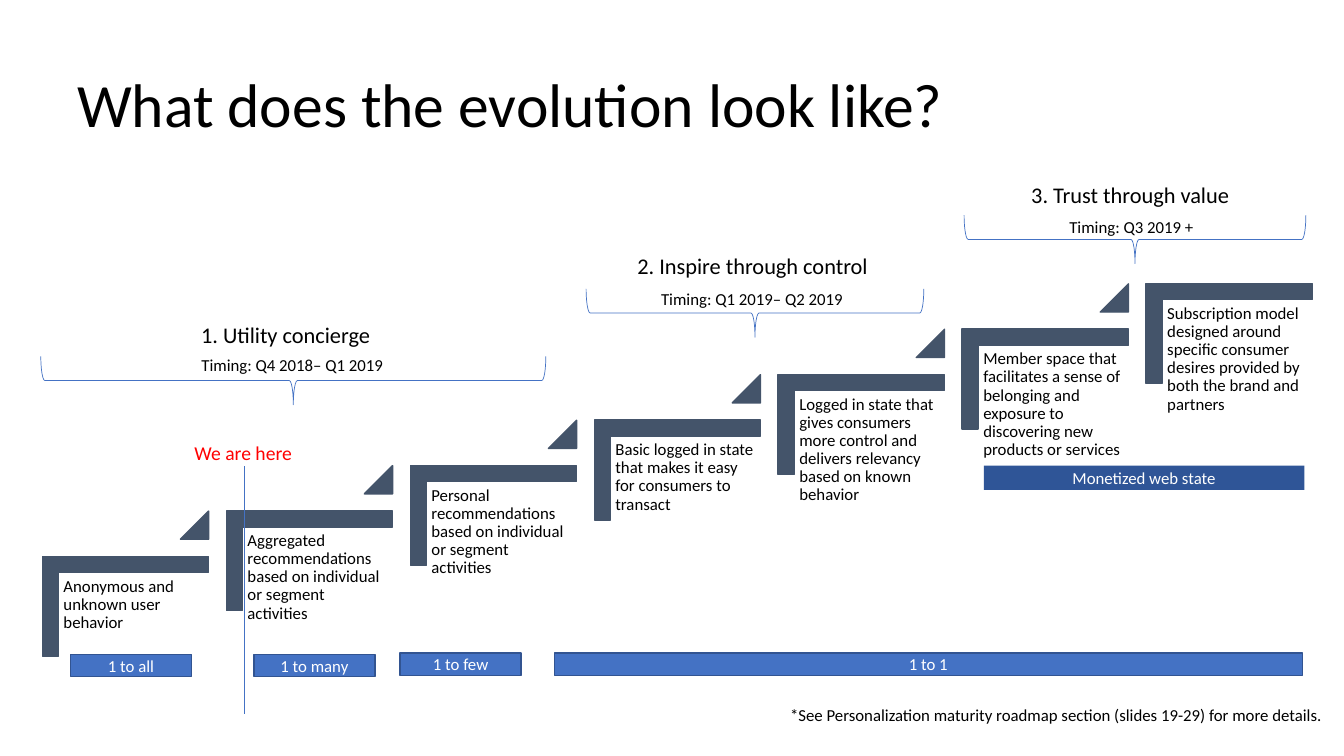
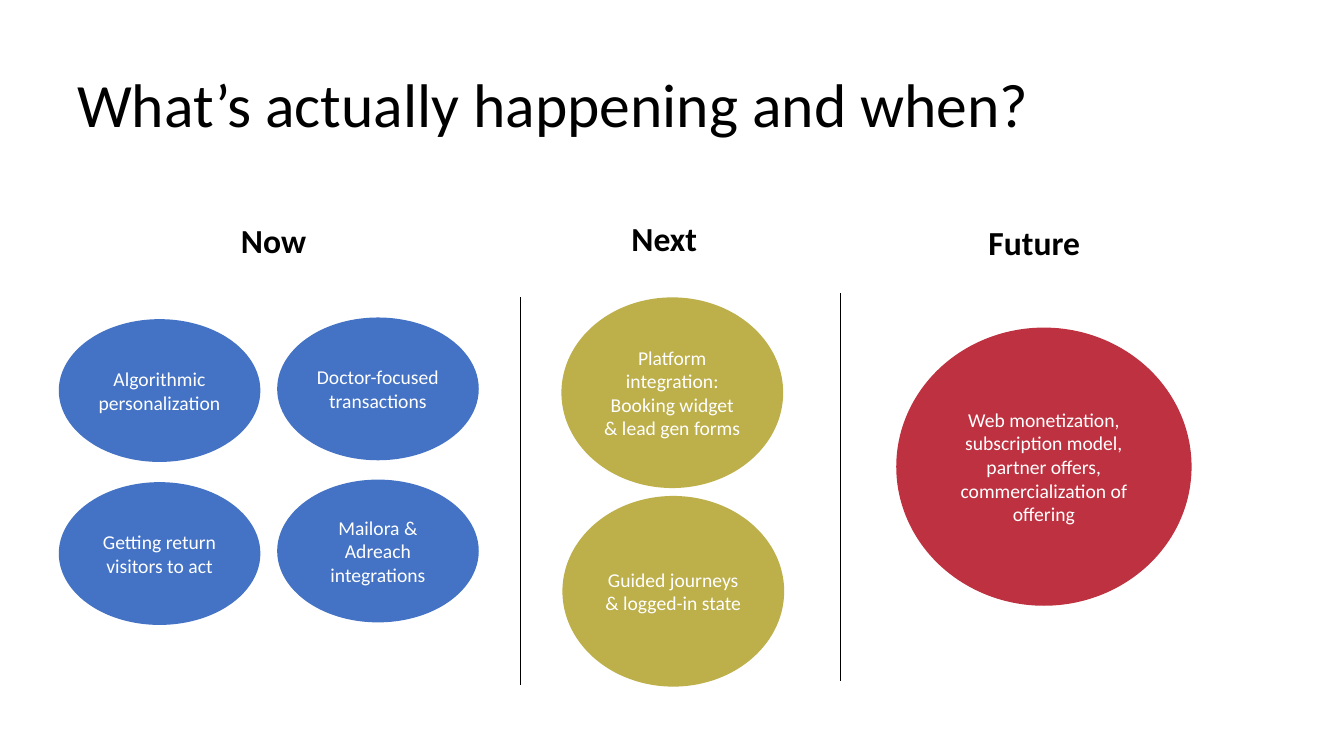
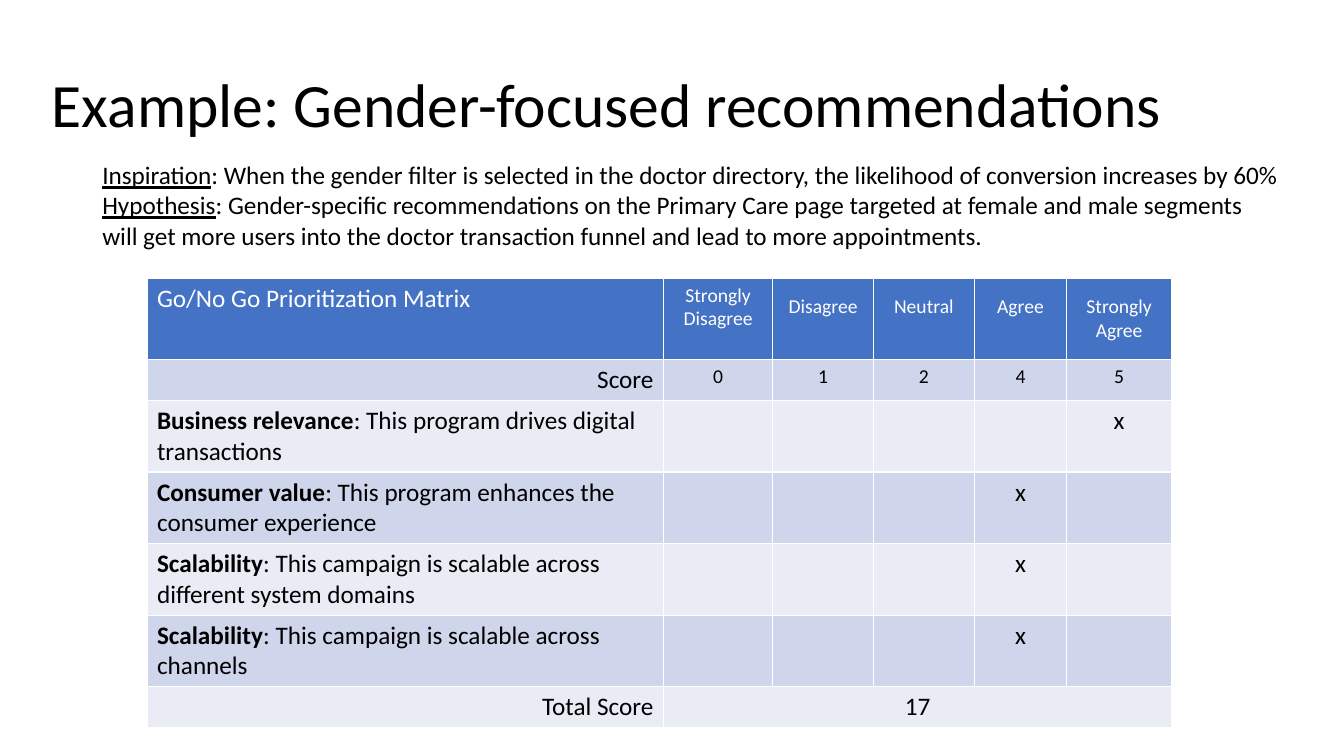
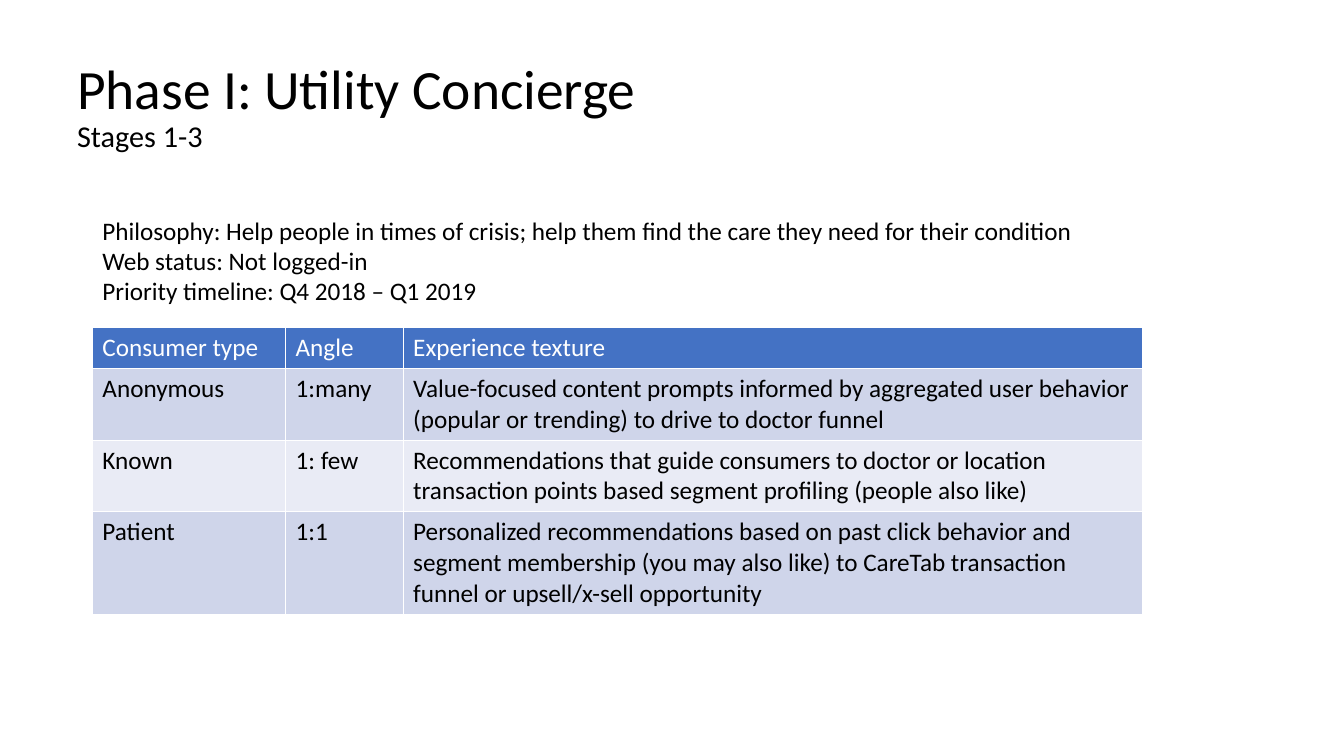
from lxml import etree
from pptx import Presentation
from pptx.dml.color import RGBColor
from pptx.enum.shapes import MSO_CONNECTOR, MSO_SHAPE
from pptx.enum.text import MSO_ANCHOR, PP_ALIGN
from pptx.oxml.ns import qn
from pptx.util import Emu, Inches, Pt

CORNER, TRIANGLE = MSO_SHAPE.CORNER, MSO_SHAPE.ISOSCELES_TRIANGLE
BRACE, RECTANGLE, OVAL = MSO_SHAPE.LEFT_BRACE, MSO_SHAPE.RECTANGLE, MSO_SHAPE.OVAL
STRAIGHT = MSO_CONNECTOR.STRAIGHT
LEFT, CENTER, RIGHT = PP_ALIGN.LEFT, PP_ALIGN.CENTER, PP_ALIGN.RIGHT
TOP, MIDDLE = MSO_ANCHOR.TOP, MSO_ANCHOR.MIDDLE

BLACK = RGBColor(0x00, 0x00, 0x00)
WHITE = RGBColor(0xFF, 0xFF, 0xFF)
RED = RGBColor(0xFF, 0x00, 0x00)
SLATE = RGBColor(0x44, 0x54, 0x6A)
BLUE = RGBColor(0x44, 0x72, 0xC4)
DEEP_BLUE = RGBColor(0x2F, 0x55, 0x97)
EDGE_BLUE = RGBColor(0x32, 0x54, 0x91)
OLIVE = RGBColor(0xBD, 0xAF, 0x4A)
CRIMSON = RGBColor(0xBD, 0x31, 0x40)
BAND_DARK = RGBColor(0xCF, 0xD5, 0xEA)
BAND_LIGHT = RGBColor(0xE9, 0xEB, 0xF5)

FONT = "Calibri"
COLUMNS, ROWS = 160, 90  # square grid over the whole slide
UNIT = Inches(1) // 12
# Table row heights in grid rows, by number of text lines
ONE_LINE, TWO_LINES, THREE_LINES = 4.88, 8.52, 12.2


def grid(*lengths):
    """Turn grid columns or rows into slide lengths."""
    return [Emu(round(length * UNIT)) for length in lengths]


def write(frame, text, size=18, color=BLACK, bold=False, align=LEFT, anchor=TOP,
          spacing=None, wrap=True, margin=None):
    """Fill a frame; text is a string or a list of paragraphs.

    A paragraph is a string or a list of (text, font overrides) spans.
    """
    frame.word_wrap = wrap
    frame.vertical_anchor = anchor
    if margin is not None:
        frame.margin_left = frame.margin_right = Inches(margin)
        frame.margin_top = frame.margin_bottom = Inches(margin)
    paragraphs = [text] if isinstance(text, str) else text
    for index, content in enumerate(paragraphs):
        para = frame.add_paragraph() if index else frame.paragraphs[0]
        para.alignment = align
        if spacing:
            para.line_spacing = spacing
        spans = [(content, {})] if isinstance(content, str) else content
        for words, changes in spans:
            span = para.add_run()
            span.text = words
            font = span.font
            font.name = FONT
            font.size = Pt(changes.get("size", size))
            font.bold = changes.get("bold", bold)
            font.underline = changes.get("underline", False)
            font.color.rgb = color


class Deck:
    """Shared style and the page being drawn; all lengths are grid units."""

    def __init__(self):
        self.file = Presentation()
        self.file.slide_width, self.file.slide_height = grid(COLUMNS, ROWS)
        self.page = None

    def new_page(self, title, left=8, size=44):
        self.page = self.file.slides.add_slide(self.file.slide_layouts[6])
        self.text(title, left, 7, 152 - left, 11.6, size=size, anchor=MIDDLE, spacing=0.9)

    def text(self, text, left, top, width, height, **style):
        box = self.page.shapes.add_textbox(*grid(left, top, width, height))
        write(box.text_frame, text, **style)

    def label(self, text, left, top, width, height=3.6, size=12, **style):
        self.text(text, left, top, width, height, size=size, wrap=False, **style)

    def shape(self, kind, left, top, width, height, fill=None, line=None, weight=1,
              rotation=0, adjust=(), text=None, size=12):
        """Place a shape by the box it covers after rotation."""
        if rotation in (90, 270):
            left, top = left + (width - height) / 2, top + (height - width) / 2
            width, height = height, width
        shape = self.page.shapes.add_shape(kind, *grid(left, top, width, height))
        shape.shadow.inherit = False
        shape.rotation = rotation
        for index, value in enumerate(adjust):
            shape.adjustments[index] = value
        if fill is None:
            shape.fill.background()
        else:
            shape.fill.solid()
            shape.fill.fore_color.rgb = fill
        if line is None:
            shape.line.fill.background()
        else:
            shape.line.color.rgb = line
            shape.line.width = Pt(weight)
        if text:
            write(shape.text_frame, text, size=size, color=WHITE, align=CENTER, anchor=MIDDLE)

    def line(self, x, start, end, color):
        connector = self.page.shapes.add_connector(STRAIGHT, *grid(x, start, x, end))
        connector.line.color.rgb = color
        connector.line.width = Pt(0.5)
        etree.SubElement(connector._element.spPr, qn("a:effectLst"))

    def table(self, left, top, widths, heights):
        frame = self.page.shapes.add_table(
            len(heights), len(widths), *grid(left, top, sum(widths), sum(heights)))
        table = frame.table
        for column, width in zip(table.columns, grid(*widths)):
            column.width = width
        for index, (row, height) in enumerate(zip(table.rows, grid(*heights))):
            row.height = height
            for cell in row.cells:
                cell.fill.solid()
                cell.fill.fore_color.rgb = (
                    BLUE if index == 0 else BAND_DARK if index % 2 else BAND_LIGHT)
        return table

    def cell(self, table, row, column, text, anchor=TOP, **style):
        cell = table.cell(row, column)
        write(cell.text_frame, text, color=BLACK if row else WHITE, **style)
        cell.vertical_anchor = anchor
        return cell


def evolution_page(deck):
    deck.new_page("What does the evolution look like?")

    # Staircase
    steps = [
        "Anonymous and unknown user behavior",
        "Aggregated recommendations based on individual or segment activities",
        "Personal recommendations based on individual or segment activities",
        "Basic logged in state that makes it easy for consumers to transact",
        "Logged in state that gives consumers more control and delivers relevancy "
        "based on known behavior",
        "Member space that facilitates a sense of belonging and exposure to "
        "discovering new products or services",
        "Subscription model designed around specific consumer desires provided by "
        "both the brand and partners",
    ]
    for index, step in enumerate(steps):
        left, top = 5.04 + 21.9 * index, 66.24 - 5.41 * index
        deck.shape(CORNER, left, top, 19.8, 11.88, SLATE, SLATE, rotation=90,
                   adjust=(0.161, 0.161))
        deck.text(step, left + 1.92, top + 1.92, 17.88, 15.72, size=12, spacing=0.9,
                  margin=0.05)
        if index < len(steps) - 1:
            deck.shape(TRIANGLE, left + 16.44, top - 5.4, 3.36, 3.36, SLATE, SLATE,
                       adjust=(1,))

    # Audience bars
    for text, left, top, width in [
        ("1 to all", 8.4, 77.88, 14.4),
        ("1 to many", 30.24, 77.88, 14.4),
        ("1 to few", 47.64, 77.76, 14.4),
        ("1 to 1", 66, 77.76, 89.04),
    ]:
        deck.shape(RECTANGLE, left, top, width, 2.64, BLUE, EDGE_BLUE, text=text)
    deck.shape(RECTANGLE, 117.12, 55.44, 38.16, 2.88, DEEP_BLUE, text="Monetized web state")

    # Phases: name, its box, timing, its box, brace
    for name, name_box, timing, timing_box, brace in [
        ("1. Utility concierge", (8.4, 37.7, 51.2),
         "Timing: Q4 2018– Q1 2019", (22.8, 41.64, 24.84), (4.86, 42.42, 60.12)),
        ("2. Inspire through control", (70.4, 29.4, 38.4),
         "Timing: Q1 2019– Q2 2019", (77.52, 33.84, 24.84), (69.78, 34.38, 40.2)),
        ("3. Trust through value", (115.1, 21, 38.9),
         "Timing: Q3 2019 +", (126.12, 25.2, 17.88), (114.78, 25.62, 40.68)),
    ]:
        deck.shape(BRACE, *brace, 5.76, line=BLUE, weight=0.5, rotation=270)
        deck.text(name, *name_box, 4.44, size=16, align=CENTER)
        deck.label(timing, *timing_box)

    # Present position and footnote
    deck.line(29.04, 84.96, 55.44, BLUE)
    deck.label("We are here", 21.96, 51.96, 14.16, 4.08, size=14, color=RED)
    deck.label("*See Personalization maturity roadmap section (slides 19-29) for more details.",
               92.88, 83.28, 66.48)


def timeline_page(deck):
    deck.new_page("What’s actually happening and when?")

    # Initiatives: colour, size, then places and texts
    for color, size, items in [
        (BLUE, (24, 17), [
            (7, 38, "Algorithmic personalization"),
            (33, 37.8, "Doctor-focused transactions"),
            (7, 57.4, "Getting return visitors to act"),
            (33, 57.1, "Mailora & Adreach integrations"),
        ]),
        (OLIVE, (26.4, 22.7), [
            (66.84, 35.4, "Platform integration: Booking widget & lead gen forms"),
            (66.96, 59.04, "Guided journeys & logged-in state"),
        ]),
        (CRIMSON, (35.16, 33.12), [
            (106.7, 39, "Web monetization, subscription model, partner offers, "
                        "commercialization of offering"),
        ]),
    ]:
        for left, top, text in items:
            deck.shape(OVAL, left, top, *size, color, text=text, size=14)

    # Dividers and headings
    for x, top in [(62, 35.4), (100, 34.9)]:
        deck.line(x, top, top + 46.2, BLACK)
    for text, left, top, width in [
        ("Now", 27.5, 25.6, 10.2), ("Next", 74, 25.3, 10.3), ("Future", 116.5, 25.8, 13.4),
    ]:
        deck.label(text, left, top, width, 6, size=24, bold=True)


def matrix_page(deck):
    deck.new_page("Example: Gender-focused recommendations", left=5)

    # Scoring matrix
    table = deck.table(17.5, 33.1, [61.5, 13, 12, 12, 11, 12.5],
                       [9.7, ONE_LINE] + [TWO_LINES] * 4 + [ONE_LINE])
    deck.cell(table, 0, 0, "Go/No Go Prioritization Matrix")
    deck.cell(table, 1, 0, "Score", align=RIGHT)
    scale = [("Strongly Disagree", "0"), ("Disagree", "1"), ("Neutral", "2"),
             ("Agree", "4"), ("Strongly Agree", "5")]
    for column, (answer, score) in enumerate(scale, start=1):
        heading = deck.cell(table, 0, column, answer, size=14, align=CENTER, anchor=MIDDLE)
        if column < len(scale):
            heading.margin_bottom = Inches(0.28)
        deck.cell(table, 1, column, score, size=14, align=CENTER)

    criteria = [
        ("Business relevance", ": This program drives digital transactions", 5),
        ("Consumer value", ": This program enhances the consumer experience", 4),
        ("Scalability", ": This campaign is scalable across different system domains", 4),
        ("Scalability", ": This campaign is scalable across channels", 4),
    ]
    for row, (name, claim, mark) in enumerate(criteria, start=2):
        deck.cell(table, row, 0, [[(name, {"bold": True}), (claim, {})]])
        deck.cell(table, row, mark, "x", align=CENTER)
    deck.cell(table, 6, 0, "Total Score", align=RIGHT)
    table.cell(6, 1).merge(table.cell(6, 5))
    deck.cell(table, 6, 1, "17", align=CENTER)

    # Reasoning
    underlined = {"underline": True}
    deck.text([
        [("Inspiration", underlined),
         (": When the gender filter is selected in the doctor directory, the likelihood "
          "of conversion increases by 60%", {})],
        [("Hypothesis", underlined),
         (": Gender-specific recommendations on the Primary Care page targeted at female "
          "and male segments will get more users into the doctor transaction funnel and "
          "lead to more appointments.", {})],
    ], 11, 18.4, 143, 12.1)


def phase_page(deck):
    deck.new_page([[("Phase I: Utility Concierge", {})], [("Stages 1-3", {"size": 21.6})]],
                  size=39.6)

    # Consumer types
    table = deck.table(11, 39, [23, 14, 88], [ONE_LINE, TWO_LINES, TWO_LINES, THREE_LINES])
    for row, texts in enumerate([
        ("Consumer type", "Angle", "Experience texture"),
        ("Anonymous", "1:many",
         "Value-focused content prompts informed by aggregated user behavior (popular or "
         "trending) to drive to doctor funnel"),
        ("Known", "1: few",
         "Recommendations that guide consumers to doctor or location transaction points "
         "based segment profiling (people also like)"),
        ("Patient", "1:1",
         "Personalized recommendations based on past click behavior and segment membership "
         "(you may also like) to CareTab transaction funnel or upsell/x-sell opportunity"),
    ]):
        for column, text in enumerate(texts):
            deck.cell(table, row, column, text)

    # Summary
    deck.label([
        "Philosophy: Help people in times of crisis; help them find the care they need for "
        "their condition",
        "Web status: Not logged-in",
        "Priority timeline: Q4 2018 – Q1 2019",
    ], 11, 25, 119.4, 12.1, size=18)


def main():
    deck = Deck()
    for draw in (evolution_page, timeline_page, matrix_page, phase_page):
        draw(deck)
    deck.file.save("out.pptx")


if __name__ == "__main__":
    main()
